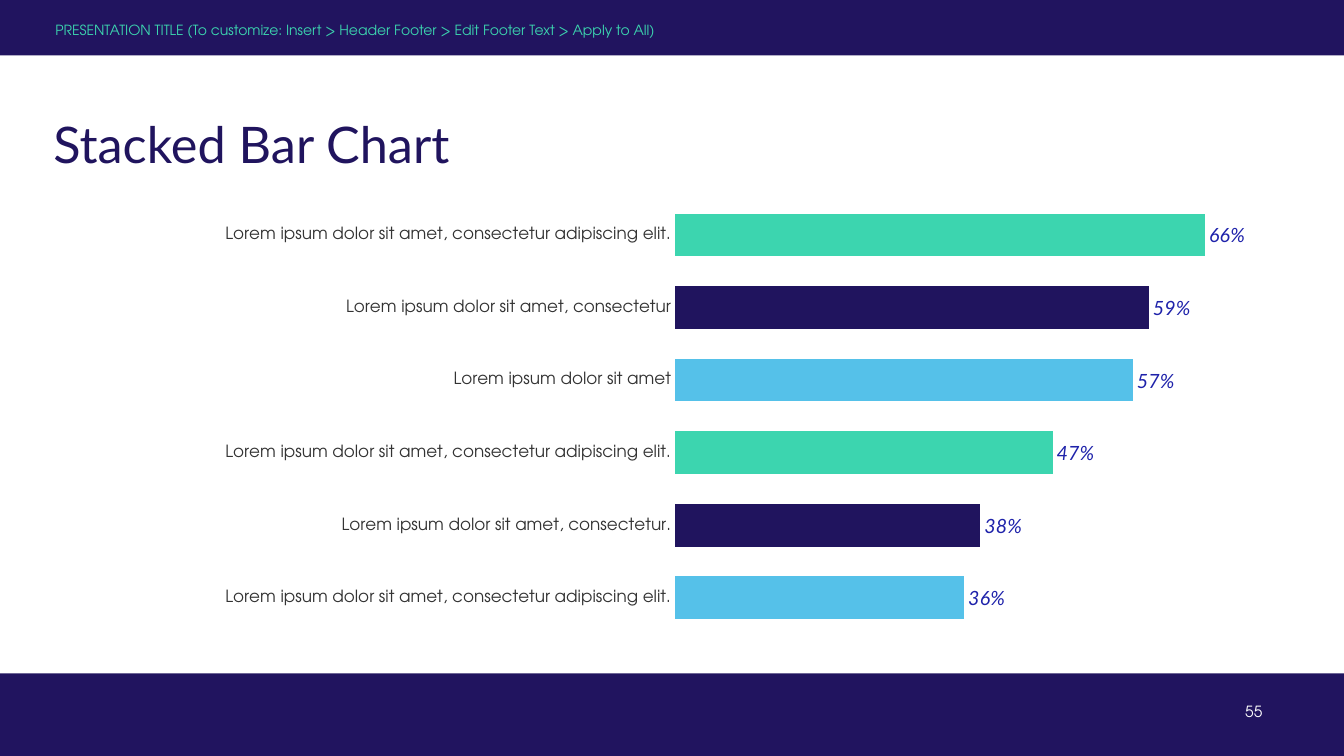
import pptx
import pptx.chart.data
import pptx.dml.color
import pptx.enum.chart
import pptx.enum.shapes
import pptx.enum.text
import pptx.oxml
import pptx.oxml.ns
import pptx.util

COLORS = {
    "navy": "21145F",
    "indigo": "20145E",
    "green": "3CD5AF",
    "sky": "55C1E9",
    "blue": "1E22AA",
    "grey": "333333",
    "white": "FFFFFF",
}
SANS, DISPLAY = "TeX Gyre Adventor", "Lato"
WIDTH, HEIGHT = pptx.util.Inches(13.33), pptx.util.Inches(7.5)
ALIGN = pptx.enum.text.PP_ALIGN
ANCHOR = pptx.enum.text.MSO_ANCHOR


def style(font, size, face, color):
    font.size = pptx.util.Pt(size)
    font.name = face
    font.color.rgb = pptx.dml.color.RGBColor.from_string(COLORS[color])


def add_text(text, box, size, face, color, align=ALIGN.LEFT, anchor=ANCHOR.TOP):
    """Add one line of text in a box of inches without margins."""
    frame = slide.shapes.add_textbox(*map(pptx.util.Inches, box)).text_frame
    frame.margin_left = frame.margin_top = frame.margin_right = frame.margin_bottom = 0
    frame.word_wrap = True
    frame.vertical_anchor = anchor
    frame.text = text
    line = frame.paragraphs[0]
    line.alignment = align
    style(line.runs[0].font, size, face, color)
    return line


deck = pptx.Presentation()
deck.slide_width, deck.slide_height = WIDTH, HEIGHT
slide = deck.slides.add_slide(deck.slide_layouts[6])

# Header and footer bands
header_height, footer_height = pptx.util.Inches(0.55), pptx.util.Inches(0.82)
for top, height in ((0, header_height), (HEIGHT - footer_height, footer_height)):
    band = slide.shapes.add_shape(
        pptx.enum.shapes.MSO_SHAPE.RECTANGLE, 0, top, WIDTH, height)
    band.shadow.inherit = False
    band.fill.solid()
    band.fill.fore_color.rgb = pptx.dml.color.RGBColor.from_string(COLORS["navy"])
    band.line.fill.background()

add_text("PRESENTATION TITLE (To customize: Insert > Header Footer > "
         "Edit Footer Text > Apply to All)",
         (0.55, 0.1, 11.56, 0.4), 10, SANS, "green", anchor=ANCHOR.MIDDLE)
title = add_text("Stacked Bar Chart", (0.53, 1.19, 11.58, 1.09), 36, DISPLAY, "indigo")
title.line_spacing = 0.9

# Bar chart
long_label = "Lorem ipsum dolor sit amet, consectetur adipiscing elit."
shares = [
    (long_label, 0.66),
    ("Lorem ipsum dolor sit amet, consectetur", 0.59),
    ("Lorem ipsum dolor sit amet", 0.57),
    (long_label, 0.47),
    ("Lorem ipsum dolor sit amet, consectetur.", 0.38),
    (long_label, 0.36),
]
chart_data = pptx.chart.data.CategoryChartData(number_format="0%")
chart_data.categories = [label for label, share in shares]
chart_data.add_series("Series 1", [share for label, share in shares])
chart = slide.shapes.add_chart(
    pptx.enum.chart.XL_CHART_TYPE.BAR_CLUSTERED,
    *map(pptx.util.Inches, (0.61, 1.78, 12.01, 4.7)), chart_data).chart
chart.has_legend = False
chart.has_title = False
style(chart.font, 14, SANS, "grey")

labels_axis = chart.category_axis
labels_axis.reverse_order = True
labels_axis.major_tick_mark = pptx.enum.chart.XL_TICK_MARK.NONE
labels_axis.format.line.fill.background()
style(labels_axis.tick_labels.font, 12, SANS, "grey")

share_axis = chart.value_axis
share_axis.minimum_scale, share_axis.maximum_scale = 0, 0.7
share_axis.has_major_gridlines = False
share_axis.visible = False

bars = chart.plots[0]
bars.gap_width = 70
bars.vary_by_categories = False
series = bars.series[0]
series.format.fill.solid()
series.format.fill.fore_color.rgb = pptx.dml.color.RGBColor.from_string(COLORS["blue"])
bar_colors = ("green", "indigo", "sky")
for row in range(len(shares)):
    fill = series.points[row].format.fill
    fill.solid()
    fill.fore_color.rgb = pptx.dml.color.RGBColor.from_string(
        COLORS[bar_colors[row % len(bar_colors)]])

percents = series.data_labels
percents.show_value = True
percents.position = pptx.enum.chart.XL_LABEL_POSITION.OUTSIDE_END
percents.number_format = "0%"
percents.number_format_is_linked = False
style(percents.font, 14, DISPLAY, "blue")
percents.font.italic = True

# Fixed place of the bars inside the chart
plot_area = chart.plots[0]._element.getparent()
for automatic in plot_area.findall(pptx.oxml.ns.qn("c:layout")):
    plot_area.remove(automatic)
settings = [("layoutTarget", "inner"), ("xMode", "edge"), ("yMode", "edge"),
            ("x", 0.507), ("y", 0.041), ("w", 0.464), ("h", 0.919)]
plot_area.insert(0, pptx.oxml.parse_xml(
    f"<c:layout {pptx.oxml.ns.nsdecls('c')}><c:manualLayout>"
    + "".join(f'<c:{name} val="{value}"/>' for name, value in settings)
    + "</c:manualLayout></c:layout>"))

add_text("55", (9.54, 6.97, 2.98, 0.24), 11, SANS, "white", align=ALIGN.RIGHT)

deck.save("out.pptx")
